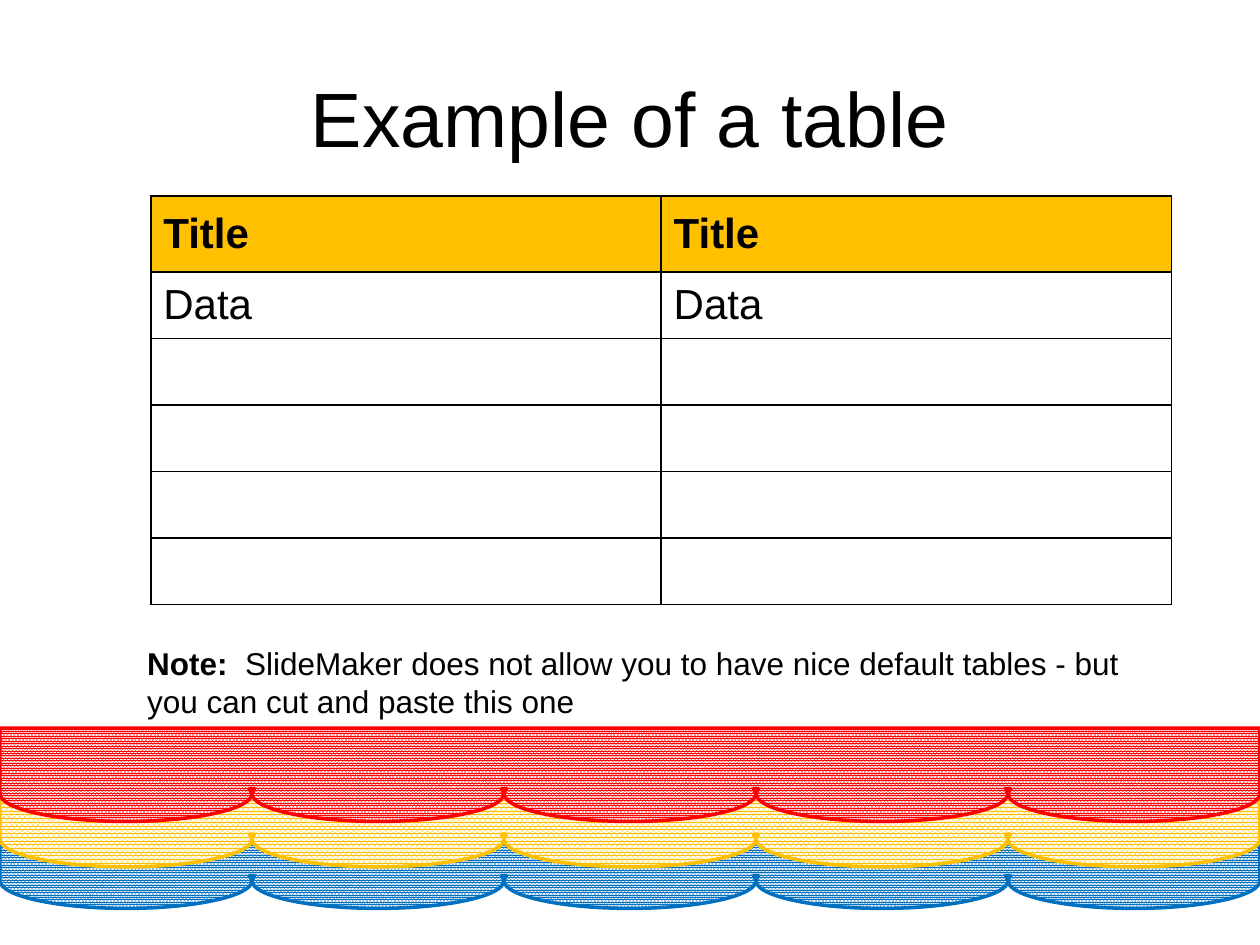
"""Build a table slide with a scalloped awning along the bottom."""
from lxml.etree import SubElement
from pptx import Presentation
from pptx.dml.color import RGBColor
from pptx.enum.dml import MSO_PATTERN
from pptx.enum.text import MSO_ANCHOR, PP_ALIGN
from pptx.oxml.ns import qn
from pptx.util import Inches, Pt

COLORS = {"text": "000000", "paper": "FFFFFF", "red": "FF0000",
          "amber": "FFC000", "blue": "0070C0"}
COLUMNS, ROWS = 100, 75
WIDTH, HEIGHT = Inches(10), Inches(7.5)
SCALLOPS, ROUNDNESS = 5, 0.55
BODY_DEPTH, ARC_DEPTH, NOTCH = 5.2, 2.2, 0.4
BANDS = [
    (64.7, "blue", MSO_PATTERN.PERCENT_90),
    (61.4, "amber", MSO_PATTERN.PERCENT_80),
    (57.8, "red", MSO_PATTERN.PERCENT_90),
]
TABLE_ROWS = [("Title", "Title"), ("Data", "Data")] + [("", "")] * 4
FORMATS = {
    "title": {"size": Pt(44), "bold": False},
    "header": {"size": Pt(24), "bold": True},
    "data": {"size": Pt(24), "bold": False},
    "label": {"size": Pt(18), "bold": True},
    "note": {"size": Pt(18), "bold": False},
}


def across(columns):
    """Return the length of a number of grid columns."""
    return round(WIDTH * columns / COLUMNS)


def down(rows):
    """Return the length of a number of grid rows."""
    return round(HEIGHT * rows / ROWS)


def color(name):
    """Return a named colour."""
    return RGBColor.from_string(COLORS[name])


def set_all(target, values):
    """Set attributes from a dict of format values."""
    for name, value in values.items():
        setattr(target, name, value)


def add_run(paragraph, text, style):
    """Add a run in a named format."""
    run = paragraph.add_run()
    run.text = text
    set_all(run.font, {"name": "Arial", **FORMATS[style]})
    run.font.color.rgb = color("text")


def add_text(slide, box, runs, anchor=MSO_ANCHOR.TOP, alignment=PP_ALIGN.LEFT):
    """Add a wrapped text box holding one paragraph."""
    left, top, width, height = box
    shape = slide.shapes.add_textbox(
        across(left), down(top), across(width), down(height))
    set_all(shape.text_frame, {"word_wrap": True, "vertical_anchor": anchor})
    paragraph = shape.text_frame.paragraphs[0]
    paragraph.alignment = alignment
    for text, style in runs:
        add_run(paragraph, text, style)


def scallop_outline(top):
    """Return (x, y, segment kind) for a band, from its lower right corner."""
    base, span = top + BODY_DEPTH, COLUMNS / SCALLOPS
    outline = [(COLUMNS, base, "line")]
    for index in reversed(range(SCALLOPS)):
        start = index * span
        outline += [(start + span / 2, base + ARC_DEPTH, "fall"),
                    (start, base, "rise")]
        if index:
            outline += [(start + 0.2, base - NOTCH, "line"),
                        (start - 0.2, base - NOTCH, "line"),
                        (start, base, "line")]
    return outline + [(0, top, "line"), (COLUMNS, top, "line")]


def curve_segments(shape, kinds):
    """Turn the falling and rising segments of an outline into curves."""
    points = list(shape._element.iter(qn("a:pt")))
    for begin, end, kind in zip(points, points[1:], kinds[1:]):
        if kind == "line":
            continue
        x, y = int(begin.get("x")), int(begin.get("y"))
        width, height = int(end.get("x")) - x, int(end.get("y")) - y
        near, far = ROUNDNESS, 1 - ROUNDNESS
        shares = {"fall": [(0, near), (far, 1)], "rise": [(near, 0), (1, far)]}
        segment = end.getparent()
        segment.tag = qn("a:cubicBezTo")
        for share_x, share_y in shares[kind]:
            SubElement(segment, qn("a:pt"), x=str(round(x + share_x * width)),
                       y=str(round(y + share_y * height)))
        segment.append(end)


def add_band(slide, top, color_name, pattern):
    """Add one patterned awning band with a scalloped lower edge."""
    outline = scallop_outline(top)
    points = [(across(x), down(y)) for x, y, kind in outline]
    builder = slide.shapes.build_freeform(*points[0])
    builder.add_line_segments(points[1:], close=True)
    shape = builder.convert_to_shape()
    curve_segments(shape, [kind for x, y, kind in outline])
    shape.shadow.inherit = False
    shape.fill.patterned()
    shape.fill.pattern = pattern
    shape.fill.fore_color.rgb = color(color_name)
    shape.fill.back_color.rgb = color("paper")
    shape.line.color.rgb = color(color_name)
    shape.line.width = Pt(2)


def add_borders(cell):
    """Draw a thin line on every side of a cell."""
    properties = cell._tc.get_or_add_tcPr()
    for side in ("a:lnL", "a:lnR", "a:lnT", "a:lnB"):
        line = SubElement(properties, qn(side), w=str(Pt(1)))
        fill = SubElement(line, qn("a:solidFill"))
        SubElement(fill, qn("a:srgbClr"), val=COLORS["text"])


def fill_cell(cell, text, is_header):
    """Format one cell and write its text."""
    cell.vertical_anchor = MSO_ANCHOR.MIDDLE
    add_borders(cell)
    if is_header:
        cell.fill.solid()
        cell.fill.fore_color.rgb = color("amber")
    else:
        cell.fill.background()
    if text:
        add_run(cell.text_frame.paragraphs[0], text,
                "header" if is_header else "data")


def add_data_table(slide):
    """Add the table with its header row."""
    table = slide.shapes.add_table(
        len(TABLE_ROWS), 2, across(11.97), down(15.57), across(81),
        down(32.4)).table
    set_all(table, {"first_row": False, "horz_banding": False})
    for row_index, texts in enumerate(TABLE_ROWS):
        table.rows[row_index].height = down(5.28 if row_index else 6)
        for column_index, text in enumerate(texts):
            fill_cell(table.cell(row_index, column_index), text, row_index == 0)


def main():
    """Build and save the slide."""
    presentation = Presentation()
    set_all(presentation, {"slide_width": WIDTH, "slide_height": HEIGHT})
    slide = presentation.slides.add_slide(presentation.slide_layouts[6])
    for band in BANDS:
        add_band(slide, *band)
    add_text(slide, (5, 3, 90, 12.5), [("Example of a table", "title")],
             MSO_ANCHOR.MIDDLE, PP_ALIGN.CENTER)
    add_data_table(slide)
    add_text(slide, (10.7, 50.6, 81.7, 7.1), [
        ("Note:  ", "label"),
        ("SlideMaker does not allow you to have nice default tables - but "
         "you can cut and paste this one", "note")])
    presentation.save("out.pptx")


if __name__ == "__main__":
    main()
